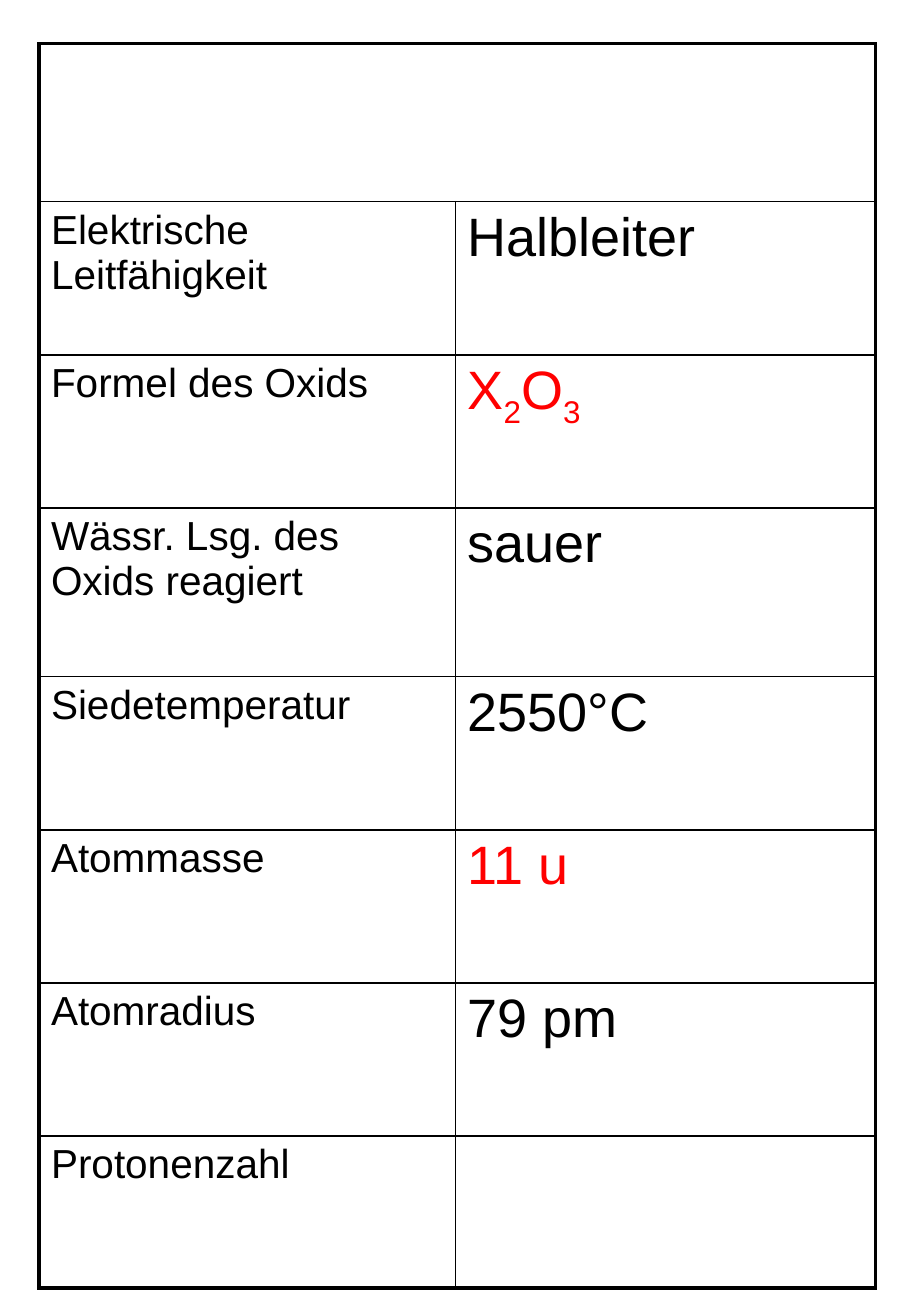
from dataclasses import dataclass

from lxml import etree
from pptx import Presentation
from pptx.dml.color import RGBColor
from pptx.oxml.ns import qn
from pptx.util import Inches, Pt


@dataclass(frozen=True)
class Theme:
    font: str = "Arial"
    ink: str = "000000"
    accent: str = "FF0000"
    label_size: int = 24
    value_size: int = 32
    outer_line: float = 2.25
    inner_line: float = 1


THEME = Theme()
SUBSCRIPT = "-25000"
COLUMN_WIDTHS = (3.43, 3.46)
HEADER_HEIGHT = 1.3

# Property, value as (text, is_subscript) runs, value colour, row height
PROPERTIES = [
    ("Elektrische Leitfähigkeit", [("Halbleiter", False)], THEME.ink, 1.26),
    ("Formel des Oxids",
     [("X", False), ("2", True), ("O", False), ("3", True)], THEME.accent, 1.26),
    ("Wässr. Lsg. des Oxids reagiert", [("sauer", False)], THEME.ink, 1.39),
    ("Siedetemperatur", [("2550°C", False)], THEME.ink, 1.26),
    ("Atommasse", [("11 u", False)], THEME.accent, 1.26),
    ("Atomradius", [("79 pm", False)], THEME.ink, 1.26),
    ("Protonenzahl", [], THEME.ink, 1.25),
]


def write_cell(cell, runs, size, color):
    p = cell.text_frame.paragraphs[0]
    for text, is_subscript in runs:
        r = p.add_run()
        r.text = text
        r.font.name = THEME.font
        r.font.size = Pt(size)
        r.font.color.rgb = RGBColor.from_string(color)
        if is_subscript:
            r.font._element.set("baseline", SUBSCRIPT)


def set_borders(cell, outer_sides):
    """Draw all four sides, the outer ones with the heavier line."""
    tc_pr = cell._tc.get_or_add_tcPr()
    for side in "LRTB":
        width = THEME.outer_line if side in outer_sides else THEME.inner_line
        ln = etree.SubElement(tc_pr, qn(f"a:ln{side}"), w=str(Pt(width)))
        fill = etree.SubElement(ln, qn("a:solidFill"))
        etree.SubElement(fill, qn("a:srgbClr"), val=THEME.ink)


def add_property_table(s, left, top, width, height):
    row_count = len(PROPERTIES) + 1
    table = s.shapes.add_table(row_count, 2, left, top, width, height).table
    table.first_row = False
    table.horz_banding = False

    # Grid
    for column, column_width in zip(table.columns, COLUMN_WIDTHS):
        column.width = Inches(column_width)
    heights = [HEADER_HEIGHT] + [item[3] for item in PROPERTIES]
    for row, row_height in zip(table.rows, heights):
        row.height = Inches(row_height)
    table.cell(0, 0).merge(table.cell(0, 1))

    # Borders and fill
    for i in range(row_count):
        for j in range(2):
            outer = "LR" if i == 0 else "LR"[j]
            outer += "T" if i == 0 else ""
            outer += "B" if i == row_count - 1 else ""
            cell = table.cell(i, j)
            set_borders(cell, outer)
            cell.fill.background()

    # Labels and values
    for i, (label, value, color, _) in enumerate(PROPERTIES, start=1):
        write_cell(table.cell(i, 0), [(label, False)], THEME.label_size, THEME.ink)
        write_cell(table.cell(i, 1), value, THEME.value_size, color)


def main():
    prs = Presentation()
    prs.slide_width = Inches(7.5)
    prs.slide_height = Inches(10.83)
    s = prs.slides.add_slide(prs.slide_layouts[6])
    add_property_table(s, Inches(0.32), Inches(0.36), Inches(6.9), Inches(10.22))
    prs.save("out.pptx")


if __name__ == "__main__":
    main()
